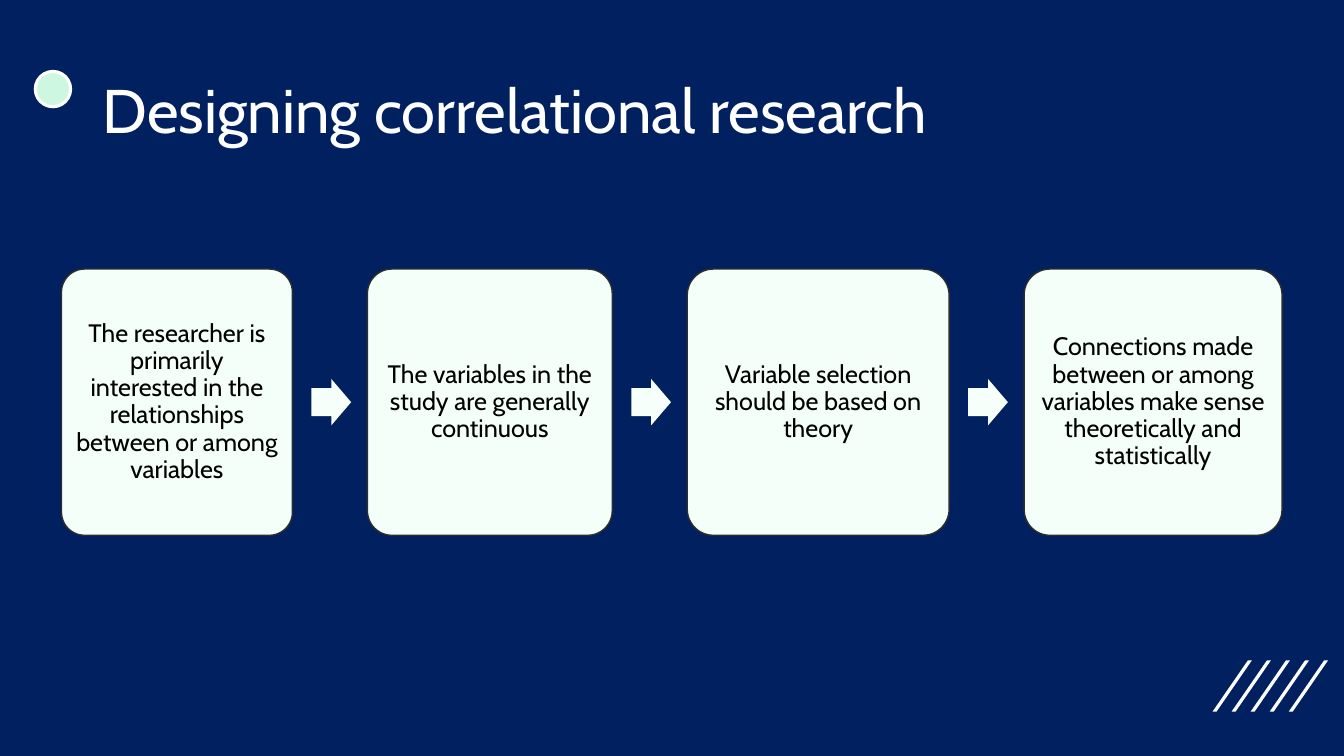
from typing import NamedTuple

from pptx import Presentation
from pptx.dml.color import RGBColor
from pptx.enum.shapes import MSO_SHAPE as Kind
from pptx.enum.text import MSO_ANCHOR as Anchor, PP_ALIGN as Align
from pptx.shapes.autoshape import Shape
from pptx.slide import Slide
from pptx.util import Cm, Pt

COLORS = {
    "navy": "002060",
    "white": "FFFFFF",
    "mint": "CDF7E0",
    "card": "F3FFF8",
    "arrow": "F7FFFA",
    "edge": "2D2D2D",
    "black": "000000",
}
FONT = "Cabin"
LEFT, TOP, HEIGHT, GAP = 1.55, 6.78, 6.71, 1.89
ARROW_W, ARROW_H, ARROW_GAP = 1.0, 1.17, 0.48


class Step(NamedTuple):
    text: str
    width: float


class Box(NamedTuple):
    left: float
    top: float
    width: float
    height: float

    def emu(self) -> tuple[Cm, ...]:
        return tuple(Cm(side) for side in self)


STEPS = [
    Step("The researcher is primarily interested in the relationships "
         "between or among variables", 5.82),
    Step("The variables in the study are generally continuous", 6.17),
    Step("Variable selection should be based on theory", 6.6),
    Step("Connections made between or among variables make sense "
         "theoretically and statistically", 6.5),
]


def color(name: str) -> RGBColor:
    return RGBColor.from_string(COLORS[name])


def paint(shape: Shape, fill: str, line: str = "", weight: float = 1) -> None:
    shape.shadow.inherit = False
    shape.fill.solid()
    shape.fill.fore_color.rgb = color(fill)
    if line:
        shape.line.color.rgb = color(line)
        shape.line.width = Pt(weight)
    else:
        shape.line.fill.background()


def write(shape: Shape, text: str, *, size: float, ink: str,
          align: Align = Align.LEFT, pad_x: float = 0.18,
          pad_y: float = 0.18) -> None:
    frame = shape.text_frame
    frame.word_wrap = True
    frame.vertical_anchor = Anchor.MIDDLE
    frame.margin_left = frame.margin_right = Cm(pad_x)
    frame.margin_top = frame.margin_bottom = Cm(pad_y)
    para = frame.paragraphs[0]
    para.alignment = align
    para.line_spacing = 0.9
    run = para.add_run()
    run.text = text
    run.font.name = FONT
    run.font.size = Pt(size)
    run.font.color.rgb = color(ink)


def add_stripes(slide: Slide) -> None:
    """Draw the row of slanted bars in the lower right corner."""
    top, base, slant, thick = 16.64, 17.93, 0.89, 0.1
    for i in range(5):
        x = 30.56 + 0.48 * i
        pen = slide.shapes.build_freeform(Cm(x + thick), Cm(base))
        pen.add_line_segments([
            (Cm(x), Cm(base)),
            (Cm(x + slant), Cm(top)),
            (Cm(x + slant + thick), Cm(top)),
        ])
        paint(pen.convert_to_shape(), "white")


def add_title(slide: Slide, text: str) -> None:
    dot = slide.shapes.add_shape(Kind.OVAL, *Box(0.89, 1.8, 0.89, 0.89).emu())
    paint(dot, "mint", "white", 2.25)
    title = slide.shapes.add_textbox(*Box(2.34, 1.02, 29.21, 3.68).emu())
    write(title, text, size=44, ink="white", pad_x=0.25, pad_y=0.13)


def add_flow(slide: Slide, steps: list[Step]) -> None:
    """Lay out the cards from left to right with an arrow in each gap."""
    x = LEFT
    for i, step in enumerate(steps):
        if i:
            spot = Box(x - GAP + ARROW_GAP, TOP + (HEIGHT - ARROW_H) / 2,
                       ARROW_W, ARROW_H)
            arrow = slide.shapes.add_shape(Kind.RIGHT_ARROW, *spot.emu())
            arrow.adjustments[0] = 0.6
            paint(arrow, "arrow")
        card = slide.shapes.add_shape(
            Kind.ROUNDED_RECTANGLE, *Box(x, TOP, step.width, HEIGHT).emu())
        card.adjustments[0] = 0.1
        paint(card, "card", "edge")
        write(card, step.text, size=18, ink="black", align=Align.CENTER)
        x += step.width + GAP


def main() -> None:
    deck = Presentation()
    deck.slide_width, deck.slide_height = Cm(33.87), Cm(19.05)
    slide = deck.slides.add_slide(deck.slide_layouts[6])
    slide.background.fill.solid()
    slide.background.fill.fore_color.rgb = color("navy")
    add_stripes(slide)
    add_title(slide, "Designing correlational research")
    add_flow(slide, STEPS)
    deck.save("out.pptx")


if __name__ == "__main__":
    main()
